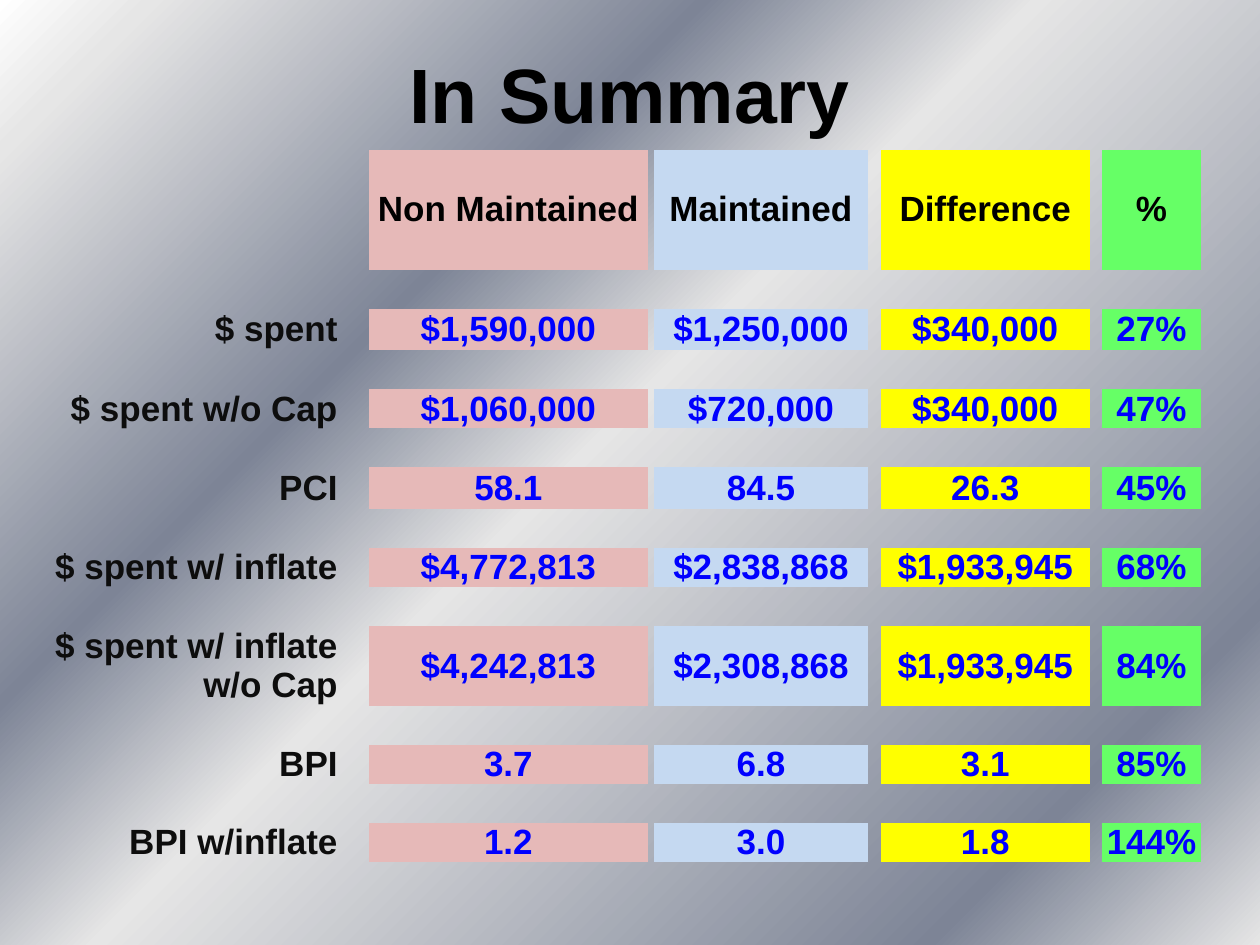
"""Build the summary slide comparing maintained and non maintained spending."""
import lxml.etree
import pptx
import pptx.dml.color
import pptx.enum.text
import pptx.oxml.ns
import pptx.util

Inches = pptx.util.Inches
ALIGN = pptx.enum.text.PP_ALIGN
MIDDLE = pptx.enum.text.MSO_ANCHOR.MIDDLE
NO_GRID_STYLE = "{2D5ABB26-0587-4C30-8999-92F81FD0307C}"

BACKGROUND_STOPS = [(0, "FFFFFF"), (7, "E6E6E6"), (32, "7D8496"),
                    (47, "E6E6E6"), (85, "7D8496"), (100, "E6E6E6")]
COLUMN_WIDTHS = [2.43, 0.25, 2.21, 0.05, 1.7, 0.1, 1.66, 0.1, 0.78]
COLUMN_FILLS = [None, "E6B9B8", "C5D9F1", "FFFF00", "66FF66"]
SPACER_HEIGHT = 0.31
SUMMARY_ROWS = [
    (0.95, ["", "Non Maintained", "Maintained", "Difference", "%"]),
    (0.33, ["$ spent", "$1,590,000", "$1,250,000", "$340,000", "27%"]),
    (0.31, ["$ spent w/o Cap", "$1,060,000", "$720,000", "$340,000", "47%"]),
    (0.33, ["PCI", "58.1", "84.5", "26.3", "45%"]),
    (0.31, ["$ spent w/ inflate", "$4,772,813", "$2,838,868", "$1,933,945", "68%"]),
    (0.63, ["$ spent w/ inflate w/o Cap", "$4,242,813", "$2,308,868", "$1,933,945", "84%"]),
    (0.31, ["BPI", "3.7", "6.8", "3.1", "85%"]),
    (0.31, ["BPI w/inflate", "1.2", "3.0", "1.8", "144%"]),
]


def color(value):
    """Return the colour for a hex string."""
    return pptx.dml.color.RGBColor.from_string(value)


class SlideBuilder:
    """Hold the text style and the current slide."""

    font_name = "Arial"

    def __init__(self, slide):
        """Keep the slide to draw on."""
        self.slide = slide

    def background(self, stops, angle):
        """Fill the background with a linear gradient, angle clockwise."""
        fill = self.slide.background.fill
        fill.gradient()
        fill.gradient_angle = 360 - angle
        stop_list = self.slide.element.xpath(".//p:bg//a:gsLst")[0]
        for old_stop in list(stop_list):
            stop_list.remove(old_stop)
        qn = pptx.oxml.ns.qn
        for percent, value in stops:
            stop = lxml.etree.SubElement(stop_list, qn("a:gs"), pos=str(percent * 1000))
            lxml.etree.SubElement(stop, qn("a:srgbClr"), val=value)

    def text(self, paragraph, text, size, value, alignment):
        """Add one bold run to an aligned paragraph."""
        paragraph.alignment = alignment
        run = paragraph.add_run()
        run.text = text
        run.font.name = self.font_name
        run.font.size = pptx.util.Pt(size)
        run.font.bold = True
        run.font.color.rgb = color(value)

    def title(self, text, left, top, width, height):
        """Place and fill the title placeholder."""
        shape = self.slide.shapes.title
        shape.left, shape.top = Inches(left), Inches(top)
        shape.width, shape.height = Inches(width), Inches(height)
        shape.text_frame.vertical_anchor = MIDDLE
        self.text(shape.text_frame.paragraphs[0], text, 44, "000000", ALIGN.CENTER)

    def cell(self, cell, text, fill, value, alignment):
        """Fill one content cell."""
        cell.vertical_anchor = MIDDLE
        if fill:
            cell.fill.solid()
            cell.fill.fore_color.rgb = color(fill)
        if text:
            self.text(cell.text_frame.paragraphs[0], text, 20, value, alignment)

    def summary_table(self, left, top, widths, rows):
        """Add the table with empty spacer rows and columns between contents."""
        heights = [rows[0][0]]
        for height, _ in rows[1:]:
            heights += [SPACER_HEIGHT, height]
        frame = self.slide.shapes.add_table(
            len(heights), len(widths), Inches(left), Inches(top),
            Inches(sum(widths)), Inches(sum(heights)))
        frame.element.xpath(".//a:tableStyleId")[0].text = NO_GRID_STYLE
        table = frame.table
        table.first_row = table.horz_banding = False
        for column, width in zip(table.columns, widths):
            column.width = Inches(width)
        for row, height in zip(table.rows, heights):
            row.height = Inches(height)
        for cell in table.iter_cells():
            cell.margin_left = cell.margin_right = 0
            cell.margin_top = cell.margin_bottom = 0
            cell.fill.background()
        for row_index, (_, texts) in enumerate(rows):
            for column_index, text in enumerate(texts):
                is_label = column_index == 0
                value = "000000" if row_index == 0 else "0D0D0D" if is_label else "0000FF"
                self.cell(table.cell(row_index * 2, column_index * 2), text,
                          COLUMN_FILLS[column_index], value,
                          ALIGN.RIGHT if is_label else ALIGN.CENTER)


def main():
    """Build and save the presentation."""
    presentation = pptx.Presentation()
    presentation.slide_width = Inches(10)
    presentation.slide_height = Inches(7.5)
    slide = presentation.slides.add_slide(presentation.slide_layouts[5])
    builder = SlideBuilder(slide)
    builder.background(BACKGROUND_STOPS, 45)
    builder.title("In Summary", 0.5, 0.3, 9, 0.87)
    builder.summary_table(0.25, 1.19, COLUMN_WIDTHS, SUMMARY_ROWS)
    presentation.save("out.pptx")


if __name__ == "__main__":
    main()
